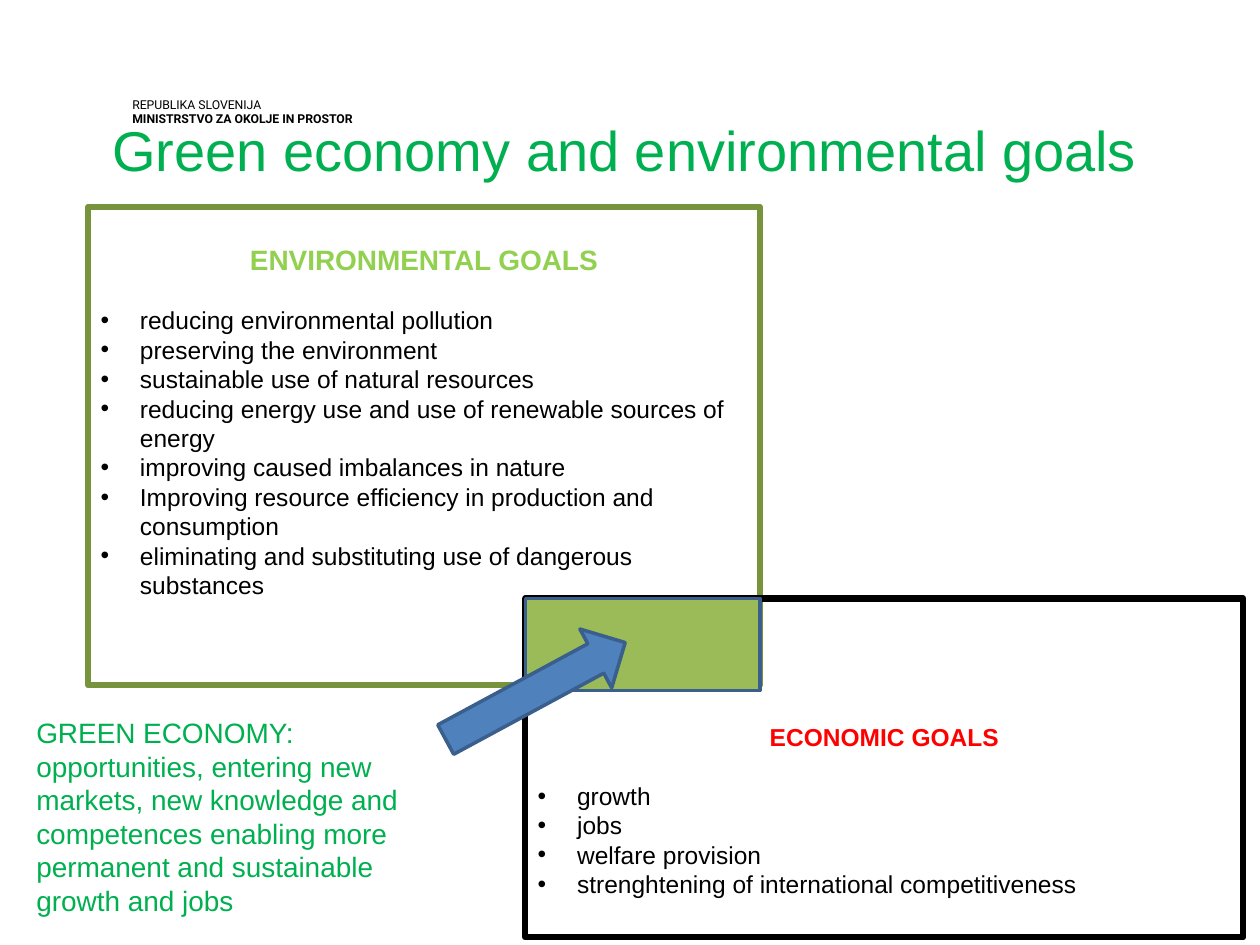
import pptx
import pptx.util
import pptx.dml.color
import pptx.enum.shapes
import pptx.enum.text
import pptx.oxml.ns
import lxml.etree

Pt = pptx.util.Pt
SHAPES = pptx.enum.shapes.MSO_SHAPE
ALIGN = pptx.enum.text.PP_ALIGN

# Content
MINISTRY = ["REPUBLIKA SLOVENIJA", "MINISTRSTVO ZA OKOLJE IN PROSTOR"]
TITLE = "Green economy and environmental goals"
GREEN_ECONOMY = (
    "GREEN ECONOMY: opportunities, entering new markets, new knowledge and "
    "competences enabling more permanent and sustainable growth and jobs"
)
GOAL_BOXES = [
    {
        "heading": "ENVIRONMENTAL GOALS", "size": 16, "color": "92D050",
        "border": "77933C", "box": (50.4, 118.1, 383.8, 273.6), "top_inset": 20.4,
        "goals": [
            "reducing environmental pollution",
            "preserving the environment",
            "sustainable use of natural resources",
            "reducing energy use and use of renewable sources of energy",
            "improving caused imbalances in nature",
            "Improving resource efficiency in production and consumption",
            "eliminating and substituting use of dangerous substances",
        ],
    },
    {
        "heading": "ECONOMIC GOALS", "size": 14, "color": "FF0000",
        "border": "000000", "box": (300.2, 342, 410.4, 193.7), "top_inset": 70.6,
        "goals": [
            "growth",
            "jobs",
            "welfare provision",
            "strenghtening of international competitiveness",
        ],
    },
]
ARROW = (247.7, 375.8, 116.6, 38.2)
BULLET_INDENT = 22.5
BLANK_LINE = 16.8


def rgb(color):
    return pptx.dml.color.RGBColor.from_string(color)


def add_text(frame, text, size=14, color="000000", font="Arial", bold=False,
             align=ALIGN.LEFT, bullet=False, before=0, line=None):
    """Write one paragraph, using the empty first paragraph if there is one."""
    paragraph = frame.paragraphs[0]
    if paragraph.runs:
        paragraph = frame.add_paragraph()
    if bullet:
        properties = paragraph._p.get_or_add_pPr()
        properties.set("marL", str(Pt(BULLET_INDENT)))
        properties.set("indent", str(-Pt(BULLET_INDENT)))
        for tag, name, value in (("a:buFont", "typeface", "Arial"), ("a:buChar", "char", "•")):
            lxml.etree.SubElement(properties, pptx.oxml.ns.qn(tag)).set(name, value)
    paragraph.alignment = align
    if before:
        paragraph.space_before = Pt(before)
    if line:
        paragraph.line_spacing = Pt(line)
    run = paragraph.add_run()
    run.text = text
    run.font.size = Pt(size)
    run.font.name = font
    run.font.bold = bold
    run.font.color.rgb = rgb(color)


def add_frame(slide, box, inset=None, wrap=True):
    frame = slide.shapes.add_textbox(*map(Pt, box)).text_frame
    frame.word_wrap = wrap
    if inset is not None:
        frame.margin_left = frame.margin_right = Pt(inset)
        frame.margin_top = frame.margin_bottom = Pt(inset)
    return frame


def add_shape(slide, kind, box, line, width, fill=None):
    shape = slide.shapes.add_shape(kind, *map(Pt, box))
    shape.shadow.inherit = False
    if fill:
        shape.fill.solid()
        shape.fill.fore_color.rgb = rgb(fill)
    else:
        shape.fill.background()
    shape.line.color.rgb = rgb(line)
    shape.line.width = Pt(width)
    return shape


def add_goal_box(slide, goal_box):
    shape = add_shape(slide, SHAPES.RECTANGLE, goal_box["box"], goal_box["border"], 3.5)
    frame = shape.text_frame
    frame.word_wrap = True
    frame.vertical_anchor = pptx.enum.text.MSO_ANCHOR.TOP
    frame.margin_top = Pt(goal_box["top_inset"])
    add_text(frame, goal_box["heading"], size=goal_box["size"],
             color=goal_box["color"], bold=True, align=ALIGN.CENTER)
    for index, goal in enumerate(goal_box["goals"]):
        add_text(frame, goal, bullet=True, before=0 if index else BLANK_LINE)


def overlap(first, second):
    """Area shared by the lower right of the first box and the second box."""
    left, top = second[:2]
    return left, top, first[0] + first[2] - left, first[1] + first[3] - top


def main():
    presentation = pptx.Presentation()
    presentation.slide_width, presentation.slide_height = Pt(720), Pt(540)
    slide = presentation.slides.add_slide(presentation.slide_layouts[6])

    # Ministry name and title
    frame = add_frame(slide, (75.6, 55.4, 170, 16.8), inset=0)
    for index, text in enumerate(MINISTRY):
        add_text(frame, text, size=7, font="Roboto", bold=index == 1, line=8.4)
    frame = add_frame(slide, (64.1, 66.2, 599, 38.9), inset=0, wrap=False)
    add_text(frame, TITLE, size=32, color="00B050")

    # Goal boxes and the green economy note
    environment, economy = GOAL_BOXES
    add_goal_box(slide, environment)
    frame = add_frame(slide, (13.7, 405.4, 254.2, 123.8))
    add_text(frame, GREEN_ECONOMY, size=16, color="00B050")
    add_goal_box(slide, economy)

    # Shared area, with an arrow pointing into it
    shared = overlap(environment["box"], economy["box"])
    shared = (*shared[:3], shared[3] + 2.9)
    add_shape(slide, SHAPES.RECTANGLE, shared, "3A5F8C", 2, fill="9BBB59")
    arrow = add_shape(slide, SHAPES.RIGHT_ARROW, ARROW, "3A5F8C", 2, fill="4F81BD")
    arrow.rotation = 331.6

    presentation.save("out.pptx")


if __name__ == "__main__":
    main()
